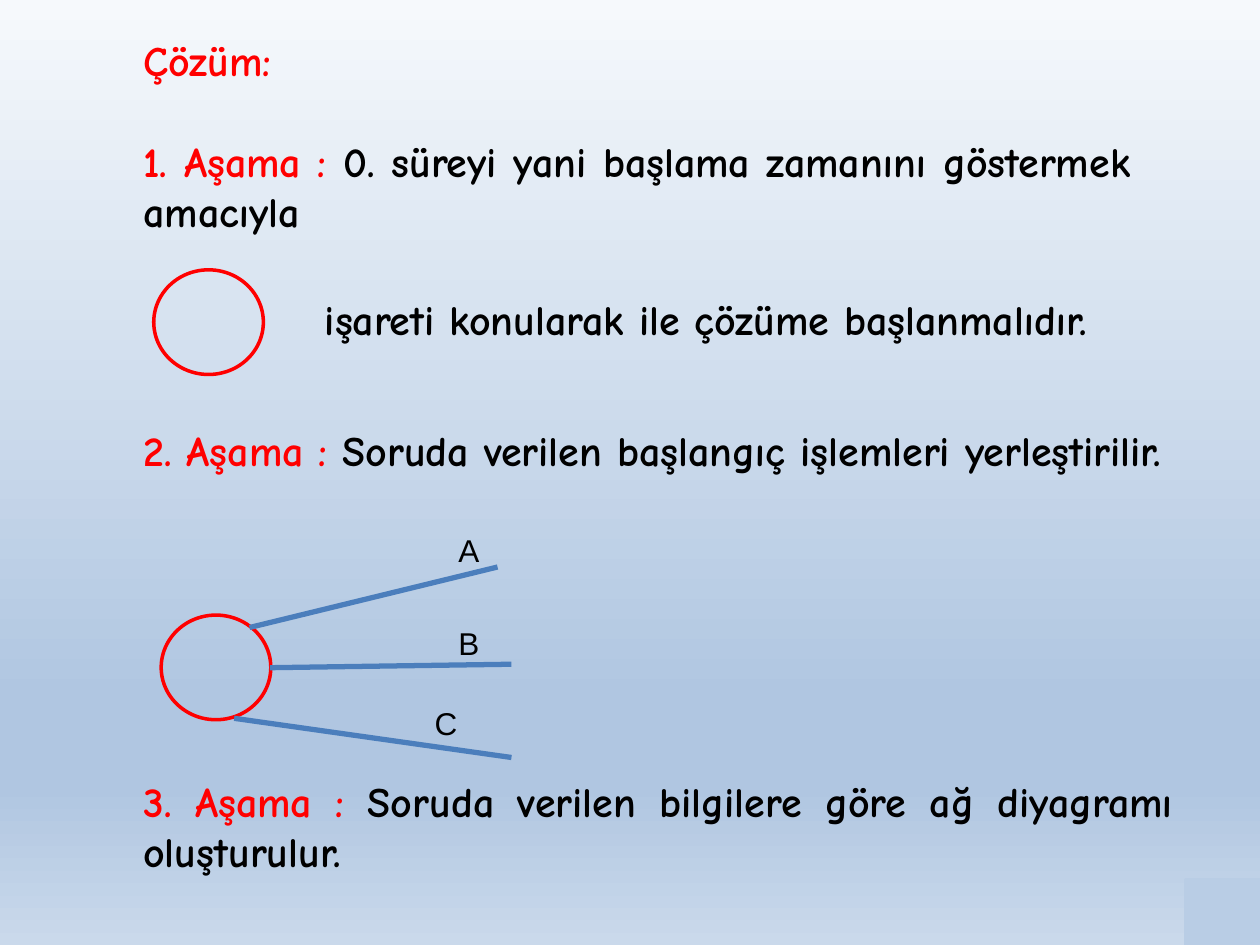
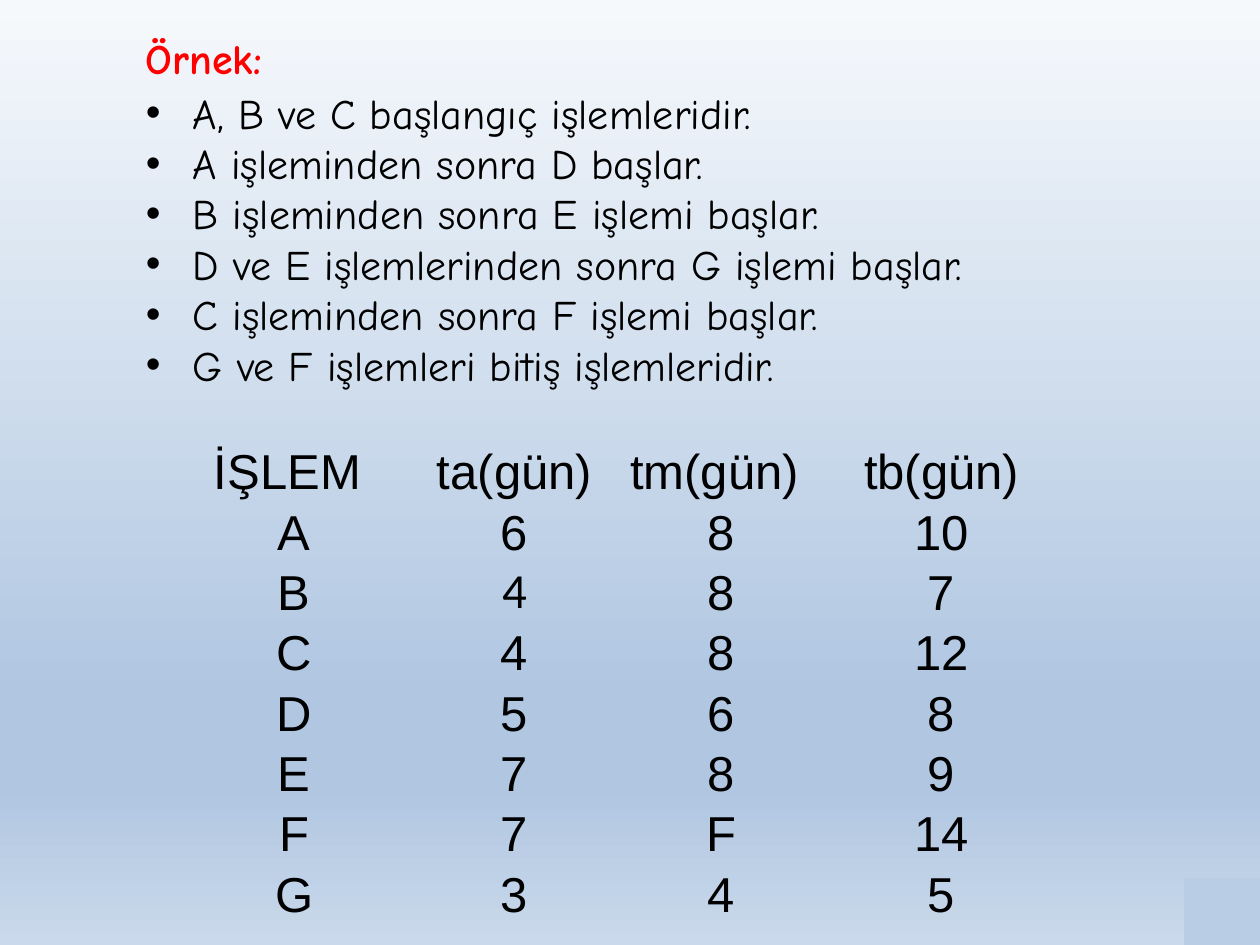
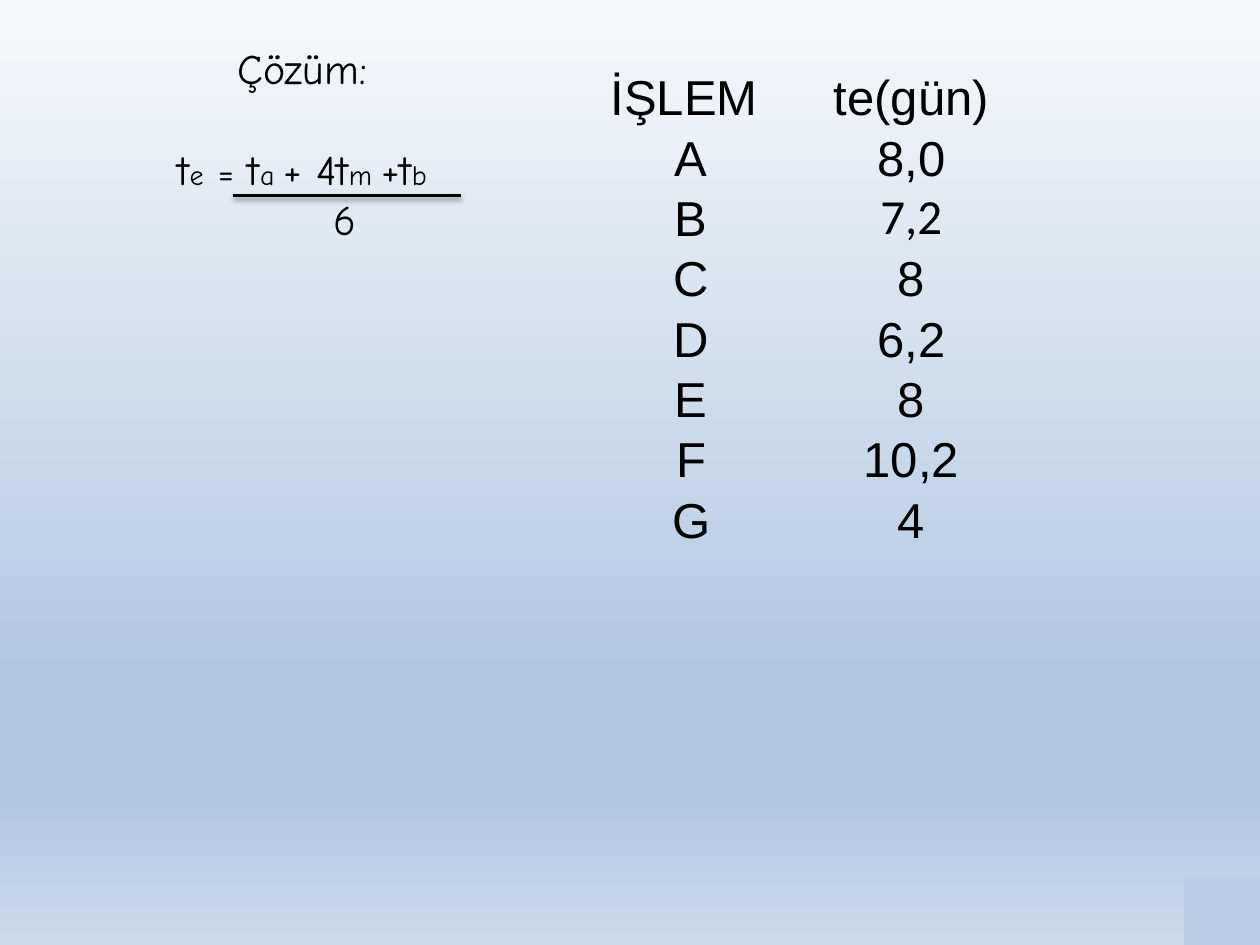
"""Three slides on network planning: first steps, example data and expected times."""
from lxml import etree
from pptx import Presentation
from pptx.dml.color import RGBColor
from pptx.enum.shapes import MSO_CONNECTOR, MSO_SHAPE
from pptx.enum.text import MSO_ANCHOR, PP_ALIGN
from pptx.oxml.ns import qn
from pptx.util import Cm, Pt

STRAIGHT = MSO_CONNECTOR.STRAIGHT
OVAL, RECTANGLE = MSO_SHAPE.OVAL, MSO_SHAPE.RECTANGLE
LEFT, CENTER, JUSTIFY = PP_ALIGN.LEFT, PP_ALIGN.CENTER, PP_ALIGN.JUSTIFY
BOTTOM = MSO_ANCHOR.BOTTOM

RED, BLACK, BLUE, CORNER = "FF0000", "000000", "4B7EBC", "B9CDE5"
BACKGROUND = [(0, "F6F9FC"), (74, "B0C6E1"), (83, "B0C6E1"), (100, "CAD9EB")]
HAND, PLAIN, DIGITS = "Comic Neue", "Arial", "Calibri"
NO_STYLE = "{2D5ABB26-0587-4C30-8999-92F81FD0307C}"
LINE_HEIGHT = 1.01
HEADER_HEIGHT, ROW_HEIGHT, COLUMN_WIDTH = 1.42, 1.21, 4.44

STAGE_1 = [
    [("Çözüm:", RED)],
    [("1. Aşama : ", RED), ("0. süreyi yani başlama zamanını göstermek amacıyla", BLACK)],
]
START_SIGN = [[("işareti konularak ile çözüme başlanmalıdır.", BLACK)]]
STAGES_2_3 = [
    [("2. Aşama : ", RED), ("Soruda verilen başlangıç işlemleri yerleştirilir.", BLACK)],
    [("3. Aşama : ", RED),
     ("Soruda verilen bilgilere göre ağ diyagramı oluşturulur.", BLACK)],
]
START_NODES = [(3.1, 5.44), (3.25, 12.4)]
ACTIVITIES = [
    ("A", (8.99, 10.59), (5.03, 12.65), (10.03, 11.43)),
    ("B", (8.99, 12.45), (5.44, 13.46), (10.31, 13.39)),
    ("C", (8.51, 14.07), (4.72, 14.48), (10.31, 15.27)),
]

EXAMPLE = [[("Örnek:", RED)]]
RULES = [
    "A, B ve C başlangıç işlemleridir.",
    "A işleminden sonra D başlar.",
    "B işleminden sonra E işlemi başlar.",
    "D ve E işlemlerinden sonra G işlemi başlar.",
    "C işleminden sonra F işlemi başlar.",
    "G ve F işlemleri bitiş işlemleridir.",
]
OPTIMISTIC = [("İŞLEM ", "ta(gün)"), ("A", "6"), ("B", "4"), ("C", "4"),
              ("D", "5"), ("E", "7"), ("F", "7"), ("G", "3")]
LIKELY_PESSIMISTIC = [("tm(gün) ", "tb(gün)"), ("8", "10"), ("8", "7"), ("8", "12"),
                      ("6", "8"), ("8", "9"), ("F", "14"), ("4", "5")]

FORMULA = [("t", 24), ("e", 16), (" ", 24), ("=", 20), (" t", 24), ("a ", 16),
           ("+ 4t", 24), ("m ", 16), ("+t", 24), ("b", 16)]
EXPECTED = [("İŞLEM ", "te(gün)"), ("A", "8,0"), ("B", "7,2"), ("C", "8"),
            ("D", "6,2"), ("E", "8"), ("F", "10,2"), ("G", "4")]


def rgb(color):
    return RGBColor.from_string(color)


def style(font, name, size, color=BLACK, bold=False):
    font.name, font.size, font.bold = name, Pt(size), bold
    font.color.rgb = rgb(color)


def paint_background(master):
    fill = master.background.fill
    fill.gradient()
    fill.gradient_angle = 270
    stops = next(master.element.iter(qn("a:gsLst")))
    for stop in list(stops):
        stops.remove(stop)
    for position, color in BACKGROUND:
        stop = etree.SubElement(stops, qn("a:gs"), pos=str(position * 1000))
        etree.SubElement(stop, qn("a:srgbClr"), val=color)


def add_outline(slide, kind, box, color, fill=None):
    shape = slide.shapes.add_shape(kind, *map(Cm, box))
    shape.shadow.inherit = False
    if fill:
        shape.fill.solid()
        shape.fill.fore_color.rgb = rgb(fill)
    else:
        shape.fill.background()
    shape.line.color.rgb = rgb(color)
    shape.line.width = Pt(2)


def add_line(slide, start, end, color, width):
    line = slide.shapes.add_connector(STRAIGHT, *map(Cm, start + end))
    line.line.color.rgb = rgb(color)
    line.line.width = Pt(width)
    return etree.SubElement(line._element.spPr, qn("a:effectLst"))


def add_text(slide, box, paragraphs, align=JUSTIFY, name=HAND, size=24, bold=False,
             gap_lines=0, wrap=True):
    """Write paragraphs of (text, color) or (text, color, size) runs."""
    frame = slide.shapes.add_textbox(*map(Cm, box)).text_frame
    frame.word_wrap = wrap
    for index, runs in enumerate(paragraphs):
        paragraph = frame.add_paragraph() if index else frame.paragraphs[0]
        paragraph.alignment = align
        if index and gap_lines:
            paragraph.space_before = Cm(LINE_HEIGHT * gap_lines)
        for text, color, *own_size in runs:
            run = paragraph.add_run()
            run.text = text
            style(run.font, name, own_size[0] if own_size else size, color, bold)
    return frame.paragraphs


def indent(paragraph, left, first=0.0):
    properties = paragraph._p.get_or_add_pPr()
    properties.set("marL", str(Cm(left)))
    properties.set("indent", str(Cm(first)))
    return properties


def add_times(slide, left, top, rows, digits_cell=None):
    height = HEADER_HEIGHT + ROW_HEIGHT * (len(rows) - 1)
    columns = len(rows[0])
    table = slide.shapes.add_table(len(rows), columns, Cm(left), Cm(top),
                                   Cm(COLUMN_WIDTH * columns), Cm(height)).table
    table.first_row = table.horz_banding = False
    next(table._tbl.iter(qn("a:tableStyleId"))).text = NO_STYLE
    for r, values in enumerate(rows):
        table.rows[r].height = Cm(ROW_HEIGHT if r else HEADER_HEIGHT)
        for c, value in enumerate(values):
            cell = table.cell(r, c)
            cell.fill.background()
            cell.vertical_anchor = BOTTOM
            cell.margin_left = cell.margin_right = cell.margin_top = Cm(0.03)
            cell.margin_bottom = 0
            paragraph = cell.text_frame.paragraphs[0]
            paragraph.text = value
            paragraph.alignment = CENTER
            style(paragraph.runs[0].font, DIGITS if (r, c) == digits_cell else PLAIN, 28)


def new_slide(prs):
    slide = prs.slides.add_slide(prs.slide_layouts[6])
    add_outline(slide, RECTANGLE, (23.9, 17.73, 1.5, 1.32), CORNER, CORNER)
    return slide


def build_stages(slide):
    add_text(slide, (2.64, 0.58, 20.4, 5.89), STAGE_1, bold=True, gap_lines=1)
    add_text(slide, (6.3, 5.79, 18.08, 1.27), START_SIGN, LEFT, bold=True, wrap=False)
    add_text(slide, (2.64, 8.43, 21.26, 10.2), STAGES_2_3, bold=True, gap_lines=6)
    for left, top in START_NODES:
        add_outline(slide, OVAL, (left, top, 2.21, 2.11), RED)
    for letter, label_at, start, end in ACTIVITIES:
        add_line(slide, start, end, BLUE, 3)
        add_text(slide, label_at + (0.95, 1.02), [[(letter, BLACK)]], LEFT, PLAIN, 18,
                 wrap=False)


def build_example(slide):
    add_text(slide, (2.69, 0.53, 21.21, 1.27), EXAMPLE, bold=True)
    for paragraph in add_text(slide, (2.69, 1.63, 21.21, 6.43),
                              [[(rule, BLACK)] for rule in RULES]):
        properties = indent(paragraph, 0.95, -0.95)
        etree.SubElement(properties, qn("a:buFont"), typeface=PLAIN)
        etree.SubElement(properties, qn("a:buChar"), char="•")
    add_times(slide, 3.71, 8.66, OPTIMISTIC, digits_cell=(2, 1))
    add_times(slide, 12.32, 8.66, LIKELY_PESSIMISTIC)


def build_expected_times(slide):
    formula = [(text, BLACK, size) for text, size in FORMULA]
    title, numerator, denominator = add_text(
        slide, (0, 0.74, 12.19, 4.37), [[("Çözüm:", BLACK)], formula, [("6", BLACK)]], CENTER)
    numerator.space_before = Cm(LINE_HEIGHT)
    indent(denominator, 1.7)
    effects = add_line(slide, (4.7, 3.94), (9.3, 3.94), BLACK, 2)
    shadow = etree.SubElement(effects, qn("a:outerShdw"), blurRad=str(Pt(3.1)),
                              dist=str(Pt(1.6)), dir="5400000", rotWithShape="0")
    shade = etree.SubElement(shadow, qn("a:srgbClr"), val=BLACK)
    etree.SubElement(shade, qn("a:alpha"), val="38000")
    add_times(slide, 11.71, 1.12, EXPECTED, digits_cell=(2, 1))


def main():
    prs = Presentation()
    prs.slide_width, prs.slide_height = Cm(25.4), Cm(19.05)
    paint_background(prs.slide_master)
    for build in (build_stages, build_example, build_expected_times):
        build(new_slide(prs))
    prs.save("out.pptx")


if __name__ == "__main__":
    main()
